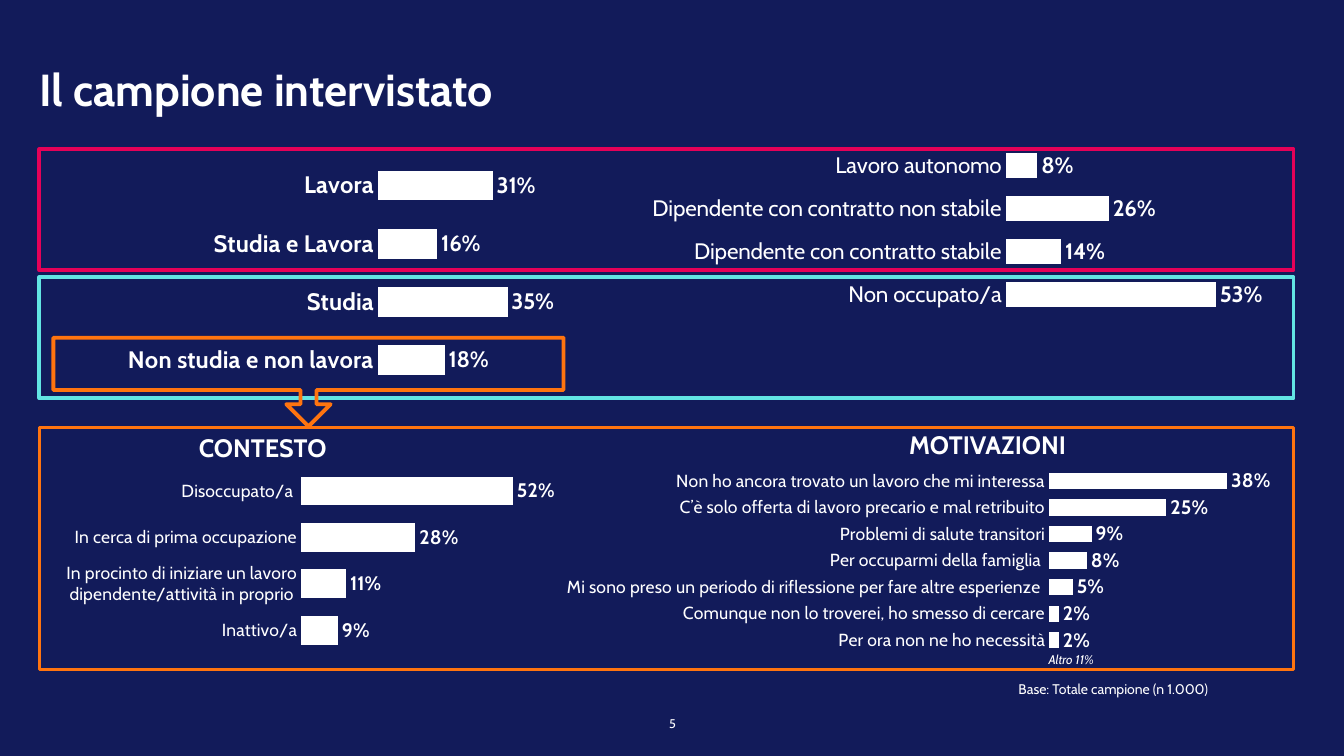
from dataclasses import dataclass

from lxml import etree
from pptx import Presentation
from pptx.chart.data import CategoryChartData
from pptx.dml.color import RGBColor
from pptx.enum.chart import XL_CHART_TYPE as ChartType, XL_LABEL_POSITION as LabelPosition
from pptx.enum.chart import XL_TICK_MARK as TickMark
from pptx.enum.shapes import MSO_SHAPE as Preset
from pptx.enum.text import PP_ALIGN as Align
from pptx.oxml.ns import qn
from pptx.slide import Slide
from pptx.util import Inches, Pt

NAVY = RGBColor(0x12, 0x1B, 0x5A)
WHITE = RGBColor(0xFF, 0xFF, 0xFF)
ORANGE = RGBColor(0xFF, 0x74, 0x0F)
CRIMSON = RGBColor(0xE5, 0x01, 0x58)
AQUA = RGBColor(0x62, 0xE5, 0xE3)
FONT = "Cabin"

Box = tuple[float, float, float, float]  # left, top, width, height in inches


@dataclass
class Frame:
    box: Box
    color: RGBColor
    weight: float = 2.75
    preset: Preset = Preset.RECTANGLE
    adjustments: tuple[float, ...] = ()


@dataclass
class Label:
    text: str
    box: Box
    size: float
    align: Align = Align.LEFT
    bold: bool = False
    italic: bool = False
    spacing: float = 1.0
    wrap: bool = True


@dataclass
class Bars:
    box: Box
    plot: Box  # fractions of the chart
    shares: dict[str, int]
    gap: int
    category_size: float
    value_size: float
    bold: bool = False
    top_down: bool = True


FRAMES = [
    Frame((0.39, 4.24, 12.44, 2.4), ORANGE, 2.5),
    Frame((0.39, 1.48, 12.44, 1.2), CRIMSON),
    Frame((0.39, 2.75, 12.44, 1.2), AQUA),
    Frame((0.53, 3.35, 5.06, 0.88), ORANGE, preset=Preset.DOWN_ARROW_CALLOUT,
          adjustments=(0.18, 0.25, 0.25, 0.59)),
]

OCCUPATION = Bars(
    (0.32, 1.52, 7.1, 2.34), (0.483, 0.014, 0.517, 0.986),
    {"Lavora": 31, "Studia e Lavora": 16, "Studia": 35, "Non studia e non lavora": 18},
    gap=96, category_size=17, value_size=16, bold=True)
CONTRACT = Bars(
    (6.18, 1.41, 7.73, 2.16), (0.491, 0.011, 0.509, 0.787),
    {"Non occupato/a": 53, "Dipendente con contratto stabile": 14,
     "Dipendente con contratto non stabile": 26, "Lavoro autonomo": 8},
    gap=72, category_size=16, value_size=16, top_down=False)
CONTEXT = Bars(
    (-0.61, 4.64, 9.18, 1.87), (0.392, 0, 0.44, 0.986),
    {"Disoccupato/a ": 52, "In cerca di prima occupazione": 28,
     "In procinto di iniziare un lavoro dipendente/attività in proprio": 11,
     "Inattivo/a": 9},
    gap=62, category_size=12.5, value_size=14)
REASONS = Bars(
    (5.24, 4.64, 9.96, 1.87), (0.519, 0, 0.466, 0.986),
    {"Non ho ancora trovato un lavoro che mi interessa": 38,
     "C’è solo offerta di lavoro precario e mal retribuito": 25,
     "Problemi di salute transitori": 9,
     "Per occuparmi della famiglia ": 8,
     "Mi sono preso un periodo di riflessione per fare altre esperienze ": 5,
     "Comunque non lo troverei, ho smesso di cercare": 2,
     "Per ora non ne ho necessità": 2},
    gap=62, category_size=12.5, value_size=14)

LABELS = [
    Label("Il campione intervistato", (0.39, 0.67, 12.36, 0.78), 32, bold=True, spacing=0.9),
    Label("CONTESTO", (-0.15, 4.29, 5.51, 0.3), 18, Align.CENTER, bold=True),
    Label("MOTIVAZIONI", (7.04, 4.26, 5.51, 0.3), 18, Align.CENTER, bold=True),
    Label("Altro 11%", (10.4, 6.44, 0.49, 0.16), 9, italic=True, spacing=1.15, wrap=False),
    Label("Base: Totale campione (n 1.000)", (9.64, 6.72, 2.34, 0.2), 10, Align.RIGHT,
          spacing=1.2),
    Label("5", (6.4, 7.09, 0.54, 0.15), 9, Align.CENTER, spacing=1.1),
]


def add_frame(slide: Slide, frame: Frame) -> None:
    outline = slide.shapes.add_shape(frame.preset, *map(Inches, frame.box))
    outline.shadow.inherit = False
    outline.fill.background()
    outline.line.color.rgb = frame.color
    outline.line.width = Pt(frame.weight)
    for index, value in enumerate(frame.adjustments):
        outline.adjustments[index] = value


def style_font(font, size: float, bold: bool = False, italic: bool = False) -> None:
    font.name = FONT
    font.size = Pt(size)
    font.bold = bold
    font.italic = italic
    font.color.rgb = WHITE


def add_label(slide: Slide, label: Label) -> None:
    frame = slide.shapes.add_textbox(*map(Inches, label.box)).text_frame
    frame.margin_left = frame.margin_right = frame.margin_top = frame.margin_bottom = 0
    frame.word_wrap = label.wrap
    frame.text = label.text
    paragraph = frame.paragraphs[0]
    paragraph.alignment = label.align
    paragraph.line_spacing = label.spacing
    style_font(paragraph.runs[0].font, label.size, label.bold, label.italic)


def place_plot(chart, plot: Box) -> None:
    """Fix the inner plot area to the given fractions of the chart."""
    area = chart._chartSpace.chart.plotArea
    for old in area.findall(qn("c:layout")):
        area.remove(old)
    layout = etree.Element(qn("c:layout"))
    manual = etree.SubElement(layout, qn("c:manualLayout"))
    settings = [("layoutTarget", "inner"), ("xMode", "edge"), ("yMode", "edge")]
    settings += zip("xywh", map(str, plot))
    for tag, value in settings:
        etree.SubElement(manual, qn(f"c:{tag}")).set("val", value)
    area.insert(0, layout)


def add_bars(slide: Slide, bars: Bars) -> None:
    data = CategoryChartData()
    data.categories = list(bars.shares)
    data.add_series("Series 1", list(bars.shares.values()))
    chart = slide.shapes.add_chart(
        ChartType.BAR_CLUSTERED, *map(Inches, bars.box), data).chart
    chart.has_legend = False
    chart.has_title = False
    style_font(chart.font, 10)
    place_plot(chart, bars.plot)

    categories = chart.category_axis
    categories.reverse_order = bars.top_down
    categories.major_tick_mark = categories.minor_tick_mark = TickMark.NONE
    categories.has_major_gridlines = False
    categories.format.line.fill.background()
    style_font(categories.tick_labels.font, bars.category_size, bars.bold)

    values = chart.value_axis
    values.minimum_scale, values.maximum_scale = 0, 100
    values.has_major_gridlines = False
    values.visible = False

    plot = chart.plots[0]
    plot.gap_width = bars.gap
    plot.vary_by_categories = False
    fill = plot.series[0].format.fill
    fill.solid()
    fill.fore_color.rgb = WHITE
    plot.has_data_labels = True
    shares = plot.data_labels
    shares.show_value = True
    shares.number_format = '#"%"'
    shares.number_format_is_linked = False
    shares.position = LabelPosition.OUTSIDE_END
    style_font(shares.font, bars.value_size, bold=True)


def main() -> None:
    deck = Presentation()
    deck.slide_width, deck.slide_height = Inches(13.33), Inches(7.5)
    slide = deck.slides.add_slide(deck.slide_layouts[6])
    slide.background.fill.solid()
    slide.background.fill.fore_color.rgb = NAVY
    for frame in FRAMES:
        add_frame(slide, frame)
    for bars in (OCCUPATION, CONTRACT, CONTEXT, REASONS):
        add_bars(slide, bars)
    for label in LABELS:
        add_label(slide, label)
    deck.save("out.pptx")


if __name__ == "__main__":
    main()
